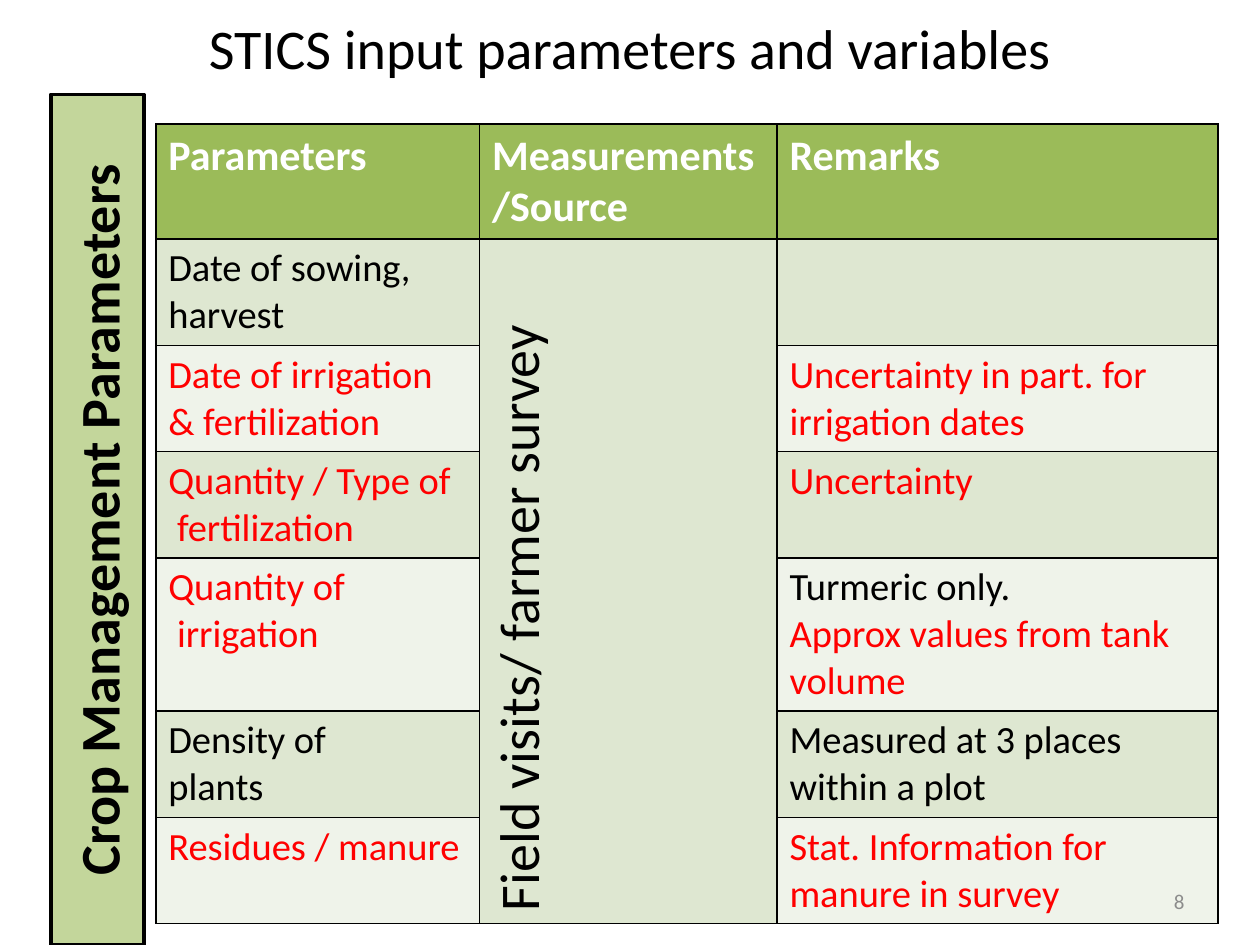
from dataclasses import dataclass

from lxml import etree
from pptx import Presentation
from pptx.dml.color import RGBColor
from pptx.enum import shapes, text
from pptx.oxml import ns
from pptx.util import Pt


@dataclass(frozen=True)
class Theme:
    font: str = "Calibri"
    black: str = "000000"
    white: str = "FFFFFF"
    red: str = "FF0000"
    gray: str = "8C8C8C"
    header: str = "9BBB59"
    bands: tuple = ("DEE7D1", "EFF3EA")
    sidebar: str = "C3D69B"
    large: int = 32
    heading: int = 24
    body: int = 22
    small: int = 12


THEME = Theme()
HEADINGS = ("Parameters", "Measurements\n/Source", "Remarks")
SOURCE = "Field visits/ farmer survey"
COLUMN_WIDTHS = (185, 170, 252)
ROW_HEIGHTS = (63, 57, 54, 54, 54, 54, 54)

# Each row: parameter, its colour, then the remark as (line, colour) pairs
ROWS = (
    ("Date of sowing, harvest", THEME.black, ()),
    ("Date of irrigation\n& fertilization", THEME.red,
     (("Uncertainty in part. for irrigation dates", THEME.red),)),
    ("Quantity / Type of\n fertilization", THEME.red,
     (("Uncertainty", THEME.red),)),
    ("Quantity of\n irrigation", THEME.red,
     (("Turmeric only.", THEME.black),
      ("Approx values from tank volume", THEME.red))),
    ("Density of\nplants", THEME.black,
     (("Measured at 3 places within a plot", THEME.black),)),
    ("Residues / manure", THEME.red,
     (("Stat. Information for manure in survey", THEME.red),)),
)


def rgb(color):
    return RGBColor.from_string(color)


def format_paragraph(paragraph, size, color, bold=False, align=None):
    if align is not None:
        paragraph.alignment = align
    for run in paragraph.runs:
        run.font.name = THEME.font
        run.font.size = Pt(size)
        run.font.bold = bold
        run.font.color.rgb = rgb(color)


def write(text_frame, content, size, color, bold=False, align=None):
    text_frame.text = content
    for paragraph in text_frame.paragraphs:
        format_paragraph(paragraph, size, color, bold, align)


def place(shape, left, top, width, height):
    shape.left, shape.top = Pt(left), Pt(top)
    shape.width, shape.height = Pt(width), Pt(height)


def style_cell(cell, fill):
    """Give the cell black one-point borders and a solid fill."""
    properties = cell._tc.get_or_add_tcPr()
    for side in ("a:lnL", "a:lnR", "a:lnT", "a:lnB"):
        line = etree.SubElement(properties, ns.qn(side), w=str(Pt(1)))
        solid = etree.SubElement(line, ns.qn("a:solidFill"))
        etree.SubElement(solid, ns.qn("a:srgbClr"), val=THEME.black)
    cell.fill.solid()
    cell.fill.fore_color.rgb = rgb(fill)


def add_title(slide):
    title = slide.shapes.title
    place(title, 36, -18, 648, 90)
    title.text_frame.vertical_anchor = text.MSO_ANCHOR.MIDDLE
    write(title.text_frame, "STICS input parameters and variables",
          THEME.large, THEME.black, align=text.PP_ALIGN.CENTER)


def add_parameter_table(slide):
    frame = slide.shapes.add_table(
        len(ROW_HEIGHTS), len(COLUMN_WIDTHS),
        Pt(89), Pt(70.8), Pt(sum(COLUMN_WIDTHS)), Pt(sum(ROW_HEIGHTS)))
    table = frame.table
    for column, width in zip(table.columns, COLUMN_WIDTHS):
        column.width = Pt(width)
    for index, (row, height) in enumerate(zip(table.rows, ROW_HEIGHTS)):
        row.height = Pt(height)
        fill = THEME.bands[(index - 1) % 2] if index else THEME.header
        for cell in row.cells:
            style_cell(cell, fill)

    for column, heading in enumerate(HEADINGS):
        write(table.cell(0, column).text_frame, heading,
              THEME.heading, THEME.white, bold=True)
    for index, (parameter, color, remarks) in enumerate(ROWS, start=1):
        write(table.cell(index, 0).text_frame, parameter, THEME.body, color)
        remark_frame = table.cell(index, 2).text_frame
        remark_frame.text = "\n".join(line for line, _ in remarks)
        for paragraph, (_, remark_color) in zip(remark_frame.paragraphs, remarks):
            format_paragraph(paragraph, THEME.body, remark_color)

    source = table.cell(1, 1)
    source.merge(table.cell(len(ROWS), 1))
    source.vertical_anchor = text.MSO_ANCHOR.MIDDLE
    source._tc.get_or_add_tcPr().set("vert", "vert270")
    write(source.text_frame, SOURCE, THEME.large, THEME.black)


def add_sidebar(slide):
    sidebar = slide.shapes.add_shape(
        shapes.MSO_SHAPE.RECTANGLE, Pt(29), Pt(54), Pt(53.2), Pt(486))
    sidebar.shadow.inherit = False
    sidebar.fill.solid()
    sidebar.fill.fore_color.rgb = rgb(THEME.sidebar)
    sidebar.line.color.rgb = rgb(THEME.black)
    sidebar.line.width = Pt(2)
    frame = sidebar.text_frame
    frame.word_wrap = True
    frame.auto_size = text.MSO_AUTO_SIZE.SHAPE_TO_FIT_TEXT
    frame.vertical_anchor = text.MSO_ANCHOR.MIDDLE
    frame._txBody.bodyPr.set("vert", "vert270")
    write(frame, "Crop Management Parameters", THEME.large, THEME.black,
          bold=True, align=text.PP_ALIGN.CENTER)


def add_page_number(slide):
    box = slide.shapes.add_textbox(Pt(516), Pt(500.5), Pt(168), Pt(28.75))
    box.text_frame.word_wrap = True
    box.text_frame.vertical_anchor = text.MSO_ANCHOR.MIDDLE
    write(box.text_frame, "8", THEME.small, THEME.gray,
          align=text.PP_ALIGN.RIGHT)


def main():
    presentation = Presentation()
    presentation.slide_width, presentation.slide_height = Pt(720), Pt(540)
    title_only = presentation.slide_layouts.get_by_name("Title Only")
    slide = presentation.slides.add_slide(title_only)
    add_title(slide)
    add_parameter_table(slide)
    add_sidebar(slide)
    add_page_number(slide)
    presentation.save("out.pptx")


if __name__ == "__main__":
    main()
